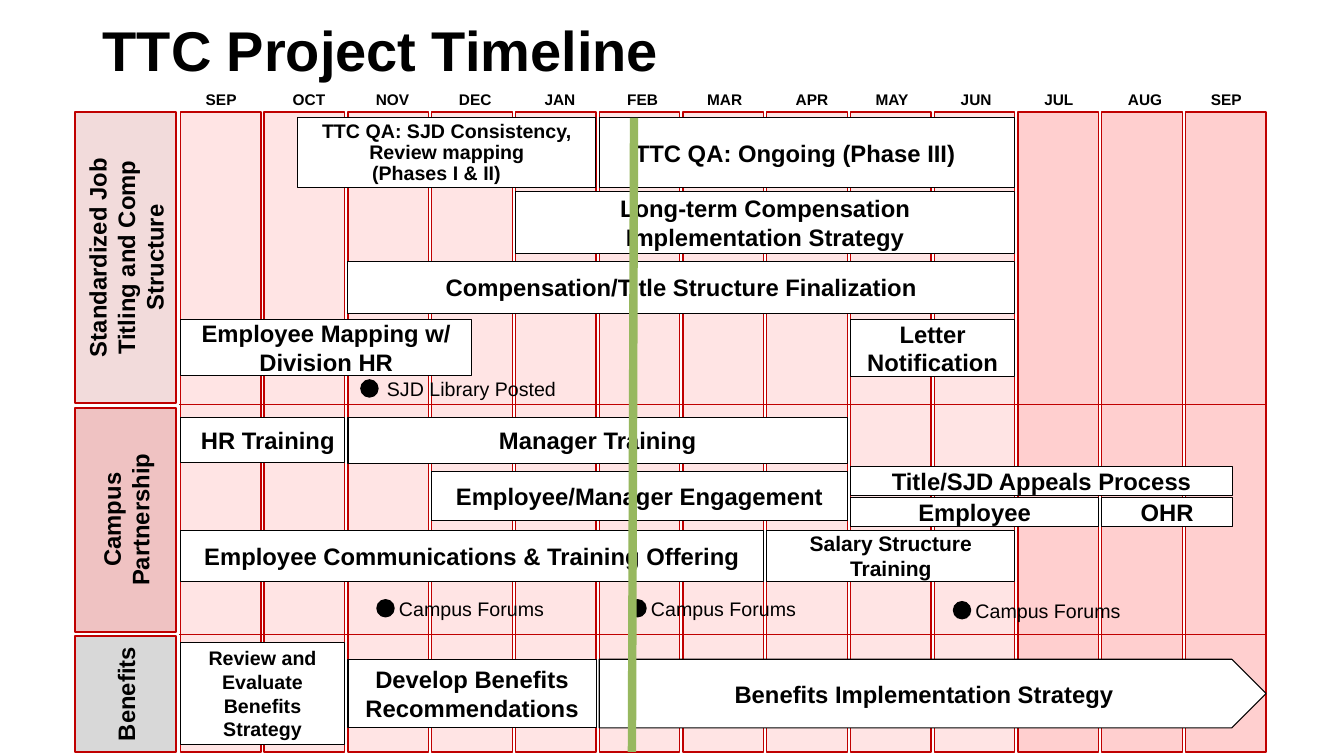
"""Builds the TTC project timeline slide."""
import pptx
import pptx.util
from lxml import etree
from pptx.dml.color import RGBColor
from pptx.enum.shapes import MSO_CONNECTOR, MSO_SHAPE
from pptx.enum.text import MSO_ANCHOR, MSO_AUTO_SIZE, PP_ALIGN
from pptx.oxml.ns import qn

Pt = pptx.util.Pt

BLACK = RGBColor(0x00, 0x00, 0x00)
WHITE = RGBColor(0xFF, 0xFF, 0xFF)
CRIMSON = RGBColor(0xC0, 0x00, 0x00)
PINK = RGBColor(0xFF, 0x8F, 0x8F)
RED = RGBColor(0xFF, 0x00, 0x00)
BLUSH = RGBColor(0xF2, 0xDB, 0xDB)
GREY = RGBColor(0xD8, 0xD8, 0xD8)
GREEN = RGBColor(0x97, 0xB8, 0x5F)

TITLE = "TTC Project Timeline"
MONTHS = [
    ("SEP", 158), ("OCT", 220.7), ("NOV", 280.4), ("DEC", 339.5),
    ("JAN", 400), ("FEB", 459), ("MAR", 517.7), ("APR", 580), ("MAY", 637.2),
    ("JUN", 697.3), ("JUL", 756.4), ("AUG", 817.9), ("SEP", 875.9),
]
FIRST_DARK_MONTH = 10

# label, centre y, length, fill, opacity in percent
TRACKS = [
    ("Standardized Job Titling and Comp Structure", 184, 208, BLUSH, 100),
    ("Campus\nPartnership", 371.2, 160, CRIMSON, 24),
    ("Benefits", 495.7, 83.5, GREY, 100),
]
DIVIDERS = [288.7, 452.9]

# text, first month, months, top, height, size
BARS = [
    ("Employee Mapping w/ Division HR", 0, 3.52, 228.2, 40.3, 17),
    ("Compensation/Title Structure Finalization", 2, 8, 186.5, 37.4, 17),
    ("Review and Evaluate Benefits Strategy", 0, 2, 458.6, 73.4, 14),
    ("Develop Benefits Recommendations", 2, 3, 470.9, 49, 17),
    ("Letter Notification", 8, 2, 228.2, 41, 17),
    ("Manager Training", 2, 6, 298.1, 33.1, 17),
    ("Employee/Manager Engagement", 3, 5, 337, 34.6, 17),
    ("Employee Communications & Training Offering", 0, 7, 378.7, 36.7, 17),
    ("Title/SJD Appeals Process", 8, 4.6, 333.4, 20.2, 17),
    ("Employee", 8, 3, 355.7, 20.2, 17),
    ("OHR", 11, 1.6, 355.7, 20.2, 17),
    ("Long-term Compensation\nImplementation Strategy", 4, 6, 136.8, 44.6, 17),
    ("Salary Structure Training", 7, 3, 378.7, 36.7, 15),
]
HR_BAR = ("HR Training", 0, 2, 298.1, 32.4, 17)
PHASES_1_2 = ("TTC QA: SJD Consistency, Review mapping\n(Phases I & II)",
              1.4, 3.6, 84.2, 49.7, 14)
PHASE_3 = ("TTC QA: Ongoing (Phase III)", 5, 5, 84.2, 49.7, 17)
ROLLOUT = ("Benefits Implementation Strategy", 5, 8, 470.9, 49, 17)

# text, dot left, dot top, gap from dot left to text box
MILESTONES = [
    ("SJD Library Posted", 257.8, 271.4, 11.5),
    ("Campus Forums", 269.3, 428.4, 8.6),
    ("Campus Forums", 449.3, 428.4, 8.6),
    ("Campus Forums", 681.1, 429.8, 8.6),
]

GRID_LEFT, GRID_TOP, GRID_HEIGHT = 128.9, 79.9, 457.2
PITCH, GAP = 59.83, 2.3
TRACK_CENTRE, TRACK_WIDTH = 89.7, 72.7
DOT = 12.2


def write(sp, text, size, bold=True, align=PP_ALIGN.CENTER):
    tf = sp.text_frame
    tf.word_wrap = True
    tf.text = text
    for p in tf.paragraphs:
        p.alignment = align
        p.font.name = "Arial"
        p.font.size = Pt(size)
        p.font.bold = bold
        p.font.color.rgb = BLACK
    return tf


def add_box(s, kind, x, y, w, h, fill, line, weight, opacity=100):
    sp = s.shapes.add_shape(kind, Pt(x), Pt(y), Pt(w), Pt(h))
    sp.shadow.inherit = False
    sp.fill.solid()
    sp.fill.fore_color.rgb = fill
    sp.line.color.rgb = line
    sp.line.width = Pt(weight)
    if opacity < 100:
        clr = sp._element.spPr.find(qn("a:solidFill"))[0]
        etree.SubElement(clr, qn("a:alpha")).set("val", str(opacity * 1000))
    return sp


def add_text(s, text, x, y, w, h, size, bold, align):
    sp = s.shapes.add_textbox(Pt(x), Pt(y), Pt(w), Pt(h))
    write(sp, text, size, bold, align)


def add_line(s, x1, y1, x2, y2, color, weight):
    ln = s.shapes.add_connector(MSO_CONNECTOR.STRAIGHT, Pt(x1), Pt(y1), Pt(x2), Pt(y2))
    ln.line.color.rgb = color
    ln.line.width = Pt(weight)
    etree.SubElement(ln._element.spPr, qn("a:effectLst"))


def add_bar(s, bar, kind=MSO_SHAPE.RECTANGLE, align=PP_ALIGN.CENTER):
    text, start, months, top, height, size = bar
    sp = add_box(s, kind, GRID_LEFT + start * PITCH, top, months * PITCH - GAP,
                 height, WHITE, BLACK, 0.75)
    tf = write(sp, text, size, align=align)
    tf.vertical_anchor = MSO_ANCHOR.MIDDLE
    return tf


def add_title(s):
    sp = s.shapes.title
    sp.left, sp.top, sp.width, sp.height = Pt(66.2), Pt(13), Pt(828), Pt(50.4)
    tf = write(sp, TITLE, 40, align=PP_ALIGN.LEFT)
    tf.auto_size = MSO_AUTO_SIZE.NONE
    tf.vertical_anchor = MSO_ANCHOR.TOP
    tf.paragraphs[0].line_spacing = 0.9


def add_grid(s):
    for i, (month, centre) in enumerate(MONTHS):
        fill, opacity = (PINK, 24) if i < FIRST_DARK_MONTH else (RED, 19)
        add_box(s, MSO_SHAPE.RECTANGLE, GRID_LEFT + i * PITCH, GRID_TOP,
                PITCH - GAP, GRID_HEIGHT, fill, CRIMSON, 1, opacity)
        add_text(s, month, centre - 25, 61.2, 50, 28, 11, True, PP_ALIGN.CENTER)
    for y in DIVIDERS:
        add_line(s, 128.2, y, 904.3, y, CRIMSON, 0.5)
    for text, centre, length, fill, opacity in TRACKS:
        sp = add_box(s, MSO_SHAPE.RECTANGLE, TRACK_CENTRE - length / 2,
                     centre - TRACK_WIDTH / 2, length, TRACK_WIDTH,
                     fill, CRIMSON, 1.5, opacity)
        sp.rotation = 270
        write(sp, text, 17).vertical_anchor = MSO_ANCHOR.MIDDLE


def add_bars(s):
    for bar in BARS:
        add_bar(s, bar)
    add_bar(s, HR_BAR, align=PP_ALIGN.RIGHT)
    add_bar(s, ROLLOUT, MSO_SHAPE.PENTAGON)
    add_bar(s, PHASE_3).margin_right = Pt(24)
    tf = add_bar(s, PHASES_1_2)
    for p in tf.paragraphs:
        p.line_spacing = Pt(15)
    p = tf.paragraphs[-1]
    p.alignment = PP_ALIGN.LEFT
    p._p.get_or_add_pPr().set("marL", str(Pt(46)))


def main():
    prs = pptx.Presentation()
    prs.slide_width, prs.slide_height = Pt(960), Pt(540)
    s = prs.slides.add_slide(prs.slide_layouts[5])
    add_title(s)
    add_grid(s)
    add_bars(s)
    for text, x, y, gap in MILESTONES:
        add_box(s, MSO_SHAPE.OVAL, x, y, DOT, DOT, BLACK, BLACK, 1)
        add_text(s, text, x + gap, y - 5.7, 150, 25.5, 14, False, PP_ALIGN.LEFT)
    add_line(s, 451.4, 537.1, 452.9, 84.2, GREEN, 6)
    prs.save("out.pptx")


if __name__ == "__main__":
    main()
